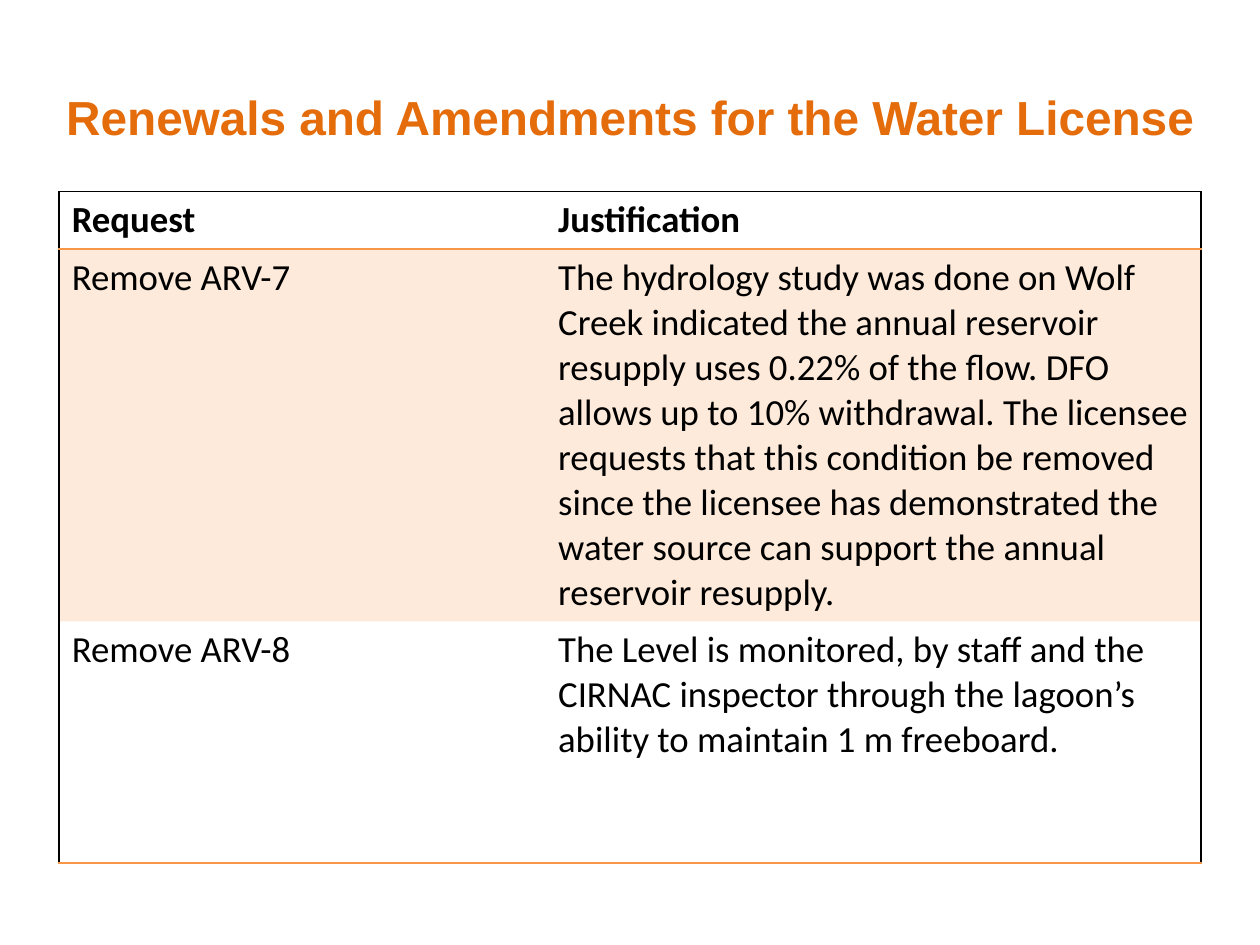
from lxml import etree
from pptx import Presentation
from pptx.dml.color import RGBColor
from pptx.enum.text import MSO_ANCHOR, PP_ALIGN
from pptx.oxml.ns import qn
from pptx.util import Inches, Pt

MID, CENTER, LEFT = MSO_ANCHOR.MIDDLE, PP_ALIGN.CENTER, PP_ALIGN.LEFT
BLACK, ORANGE, TITLE = "000000", "F79646", "E46C0A"


def write(frame, text, font="Calibri", size=21, color=BLACK, bold=False, align=LEFT):
    para = frame.paragraphs[0]
    para.alignment = align
    run = para.add_run()
    run.text = text
    run.font.name, run.font.size, run.font.bold = font, Pt(size), bold
    run.font.color.rgb = RGBColor.from_string(color)


def border(cell, side, color=None):
    """Draw one side (L, R, T or B) of a cell; no colour means no line."""
    line = etree.SubElement(cell._tc.get_or_add_tcPr(), qn("a:ln" + side), w=str(Pt(1)))
    if color:
        fill = etree.SubElement(line, qn("a:solidFill"))
        etree.SubElement(fill, qn("a:srgbClr"), val=color)
    else:
        etree.SubElement(line, qn("a:noFill"))


deck = Presentation()
deck.slide_width, deck.slide_height = Inches(10), Inches(7.5)
slide = deck.slides.add_slide(deck.slide_layouts[5])

title = slide.shapes.title
title.left, title.top = 0, Inches(0.3)
title.width, title.height = deck.slide_width, Inches(1.25)
title.text_frame.vertical_anchor = MID
write(title.text_frame, "Renewals and Amendments for the Water License",
      font="Arial", size=27.3, color=TITLE, bold=True, align=CENTER)

rows = [
    ("Request", "Justification"),
    ("Remove ARV-7",
     "The hydrology study was done on Wolf Creek indicated the annual reservoir "
     "resupply uses 0.22% of the flow. DFO allows up to 10% withdrawal. The licensee "
     "requests that this condition be removed since the licensee has demonstrated "
     "the water source can support the annual reservoir resupply."),
    ("Remove ARV-8",
     "The Level is monitored, by staff and the CIRNAC inspector through the lagoon’s "
     "ability to maintain 1 m freeboard."),
]
widths, heights = [3.86, 5.2], [0.39, 2.52, 1.92]
last = len(rows) - 1

table = slide.shapes.add_table(
    len(rows), len(widths), Inches(0.47), Inches(1.52),
    Inches(sum(widths)), Inches(sum(heights))).table
table.horz_banding = False
for col, width in zip(table.columns, widths):
    col.width = Inches(width)

for r, texts in enumerate(rows):
    table.rows[r].height = Inches(heights[r])
    for c, text in enumerate(texts):
        cell = table.cell(r, c)
        write(cell.text_frame, text, bold=r == 0)
        border(cell, "L", BLACK if c == 0 else None)
        border(cell, "R", BLACK if c == 1 else None)
        border(cell, "T", {0: BLACK, 1: ORANGE}.get(r))
        border(cell, "B", ORANGE if r in (0, last) else None)
        if r == 1:
            cell.fill.solid()
            cell.fill.fore_color.rgb = RGBColor.from_string(ORANGE)
            tint = cell._tc.tcPr.find(qn("a:solidFill")).find(qn("a:srgbClr"))
            etree.SubElement(tint, qn("a:alpha"), val="20000")
        else:
            cell.fill.background()

deck.save("out.pptx")
